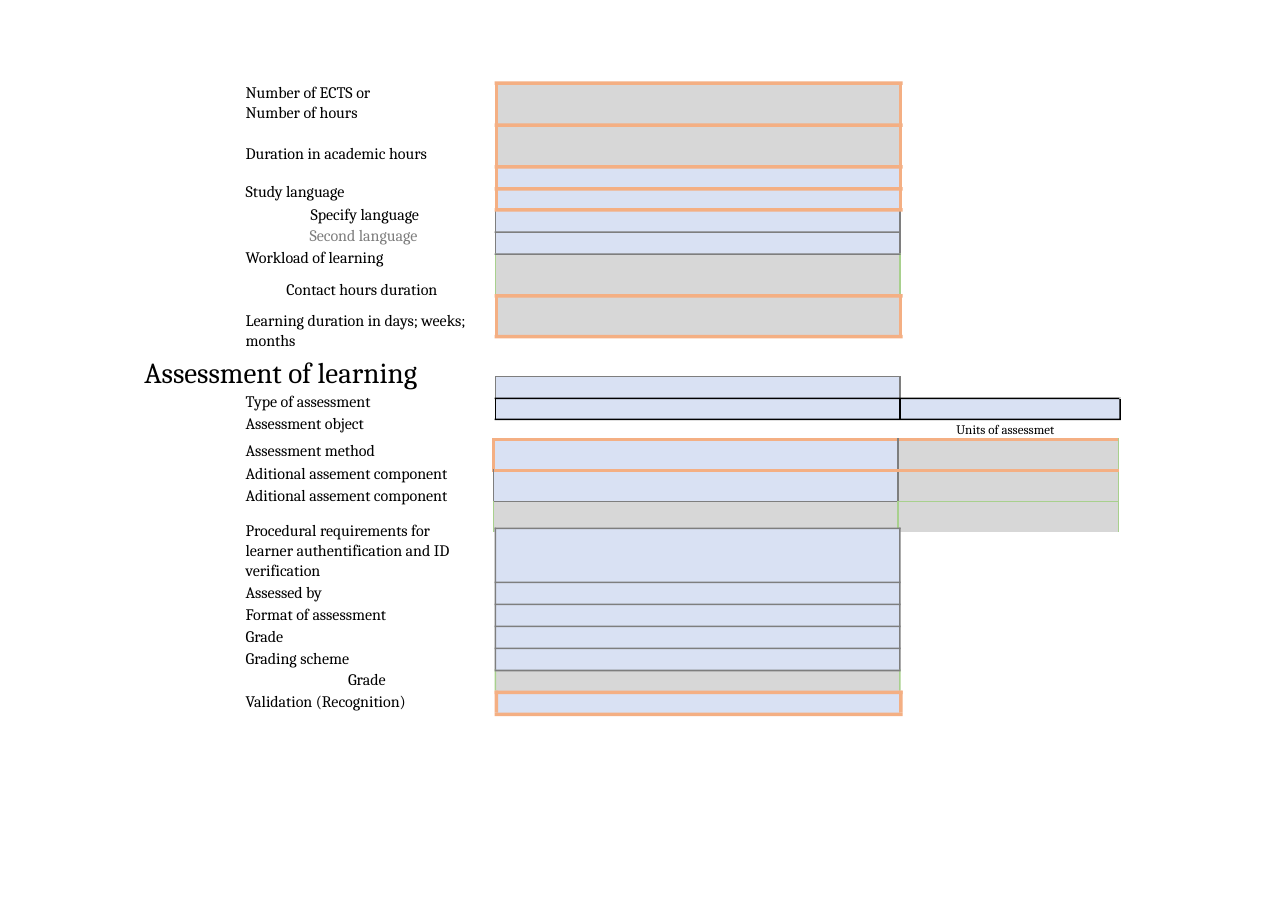
"""Build the slide with the workload and assessment form."""
from collections import namedtuple
from itertools import groupby

from lxml import etree
from pptx import Presentation
from pptx import util as u
from pptx.dml.color import RGBColor
from pptx.enum import text
from pptx.oxml.ns import qn

PX = 9144
FONT = "Cambria"
COLORS = {
    "blue": "D9E1F3", "silver": "D7D7D7", "orange": "F4AF83", "grey": "7E7E7E",
    "green": "A8D08D", "black": "000000",
}
EDGE_WEIGHTS = {"green": 1, "grey": 1, "black": 1, "orange": 2.25}
EDGE_ORDER = list(EDGE_WEIGHTS)

Label = namedtuple("Label", "lines indent first spacing before size tints",
                   defaults=(0, 1.0, 0, 10.5, {}))
Row = namedtuple("Row", "top bottom fill edge")

WORKLOAD_ROWS = [
    *[(38, "silver", "orange")] * 2,
    (20, "blue", "orange"),
    (19, "blue", "orange"),
    (21, "blue", "grey"),
    (20, "blue", "grey"),
    (37, "silver", "green"),
    (37, "silver", "orange"),
]
GRADING_ROWS = [
    (49, "blue", "grey"),
    *[(20, "blue", "grey")] * 4,
    (19, "silver", "green"),
    (20, "blue", "orange"),
]
METHOD_CELLS = [
    [("blue", ("orange", "grey", "orange", "orange")),
     ("silver", ("grey", "green", "orange", "orange"))],
    [("blue", ("grey", "grey", "orange", "grey")),
     ("silver", ("grey", "green", "orange", "green"))],
    [("silver", ("green", "green", "grey", None)),
     ("silver", ("green", "green", "green", None))],
]
WORKLOAD_LABELS = [
    Label(["Number of ECTS or", "Number of hours"], 93, spacing=1.02),
    Label(["Duration in academic hours", "Study language"], 93, spacing=1.98, before=1.9),
    Label(["Specify language"], 152, spacing=1.16),
    Label(["Second language", "Workload of learning"], 93, 58, 1.13, tints={0: "grey"}),
    Label(["Contact hours duration"], 93, 37, before=8.1),
    Label(["Learning duration in days; weeks;", "months"], 93, spacing=1.02, before=7.9),
    Label(["Assessment of learning"], 1, before=3.2, size=19),
    Label(["Type of assessment", "Assessment object"], 93, spacing=1.11, before=0.1),
]
UNITS_LABELS = [Label(["Units of assessmet"], 1, size=8.5)]
ASSESSMENT_LABELS = [
    Label(["Assessment method"], 1),
    Label(["Aditional assement component"] * 2, 1, spacing=1.13, before=0.9),
    Label(["Procedural requirements for", "learner authentification and ID", "verification"],
          1, spacing=1.02, before=10.4),
    Label(["Assessed by"], 1, before=2.2),
    Label(["Format of assessment", "Grade"], 1, spacing=1.13),
    Label(["Grading scheme"], 1, before=1.7),
    Label(["Grade", "Validation (Recognition)"], 1, 93, 1.13),
]


def px(length):
    """Turn px into EMU."""
    return u.Emu(length * PX)


def color(name):
    """Look up a colour by name."""
    return RGBColor.from_string(COLORS[name])


def rect(left, top, right, bottom):
    """List the corners of a rectangle."""
    return [(right, top), (left, top), (left, bottom), (right, bottom)]


def draw_area(page, contours, fill):
    """Draw one filled shape made of closed contours in EMU."""
    builder = page.shapes.build_freeform(*contours[0][0], scale=1.0)
    for index, points in enumerate(contours):
        if index:
            builder.move_to(*points[0])
        builder.add_line_segments(points[1:], close=True)
    area = builder.convert_to_shape()
    area.shadow.inherit = False
    area.fill.solid()
    area.fill.fore_color.rgb = color(fill)
    area.line.fill.background()


def side_bar(x, top, bottom, edge):
    """Outline an upright border bar."""
    return rect(px(x), px(top), px(x) + u.Pt(EDGE_WEIGHTS[edge]), px(bottom))


def rule_bar(left, right, y, edge):
    """Outline a level border bar."""
    weight = u.Pt(EDGE_WEIGHTS[edge])
    return rect(px(left), px(y), px(right) + weight, px(y) + weight)


def field_stack(page, left, top, width, sizes, paired):
    """Stack fields with bars between them; paired sides share a shape."""
    right, rows = left + width, []
    for height, fill, edge in sizes:
        rows.append(Row(top, top + height, fill, edge))
        top += height
    for fill, run in groupby(rows, key=lambda row: row.fill):
        band = list(run)
        corners = [px(v + 1) for v in (left, band[0].top, right, band[-1].bottom)]
        draw_area(page, [rect(*corners)], fill)
    for sides in [(left, right)] if paired else [(left,), (right,)]:
        for edge, run in groupby(rows, key=lambda row: row.edge):
            band = list(run)
            draw_area(page, [side_bar(x, band[0].top, band[-1].bottom, edge)
                             for x in sides], edge)
    edges = [row.edge for row in rows]
    strongest = [max(pair, key=EDGE_ORDER.index)
                 for pair in zip(edges[:1] + edges, edges + edges[-1:])]
    rules = zip(strongest, [row.top for row in rows] + [top])
    for edge, run in groupby(rules, key=lambda rule: rule[0]):
        draw_area(page, [rule_bar(left, right, y, edge) for _, y in run], edge)


def assessment_frame(page, left, top, width, units_width, step):
    """Draw the assessment fields, the lower one reaching over the units."""
    right, end = left + width, left + width + units_width
    middle, bottom = top + step, top + 2 * step - 1
    outline = [(end, middle), (right, middle), (right, top), (left, top),
               (left, bottom), (end, bottom)]
    draw_area(page, [[(px(x + 1), px(y + 1)) for x, y in outline]], "blue")
    for x in (left, right):
        draw_area(page, [side_bar(x, top, middle, "grey")], "grey")
        draw_area(page, [side_bar(x, middle, bottom + 1, "black")], "black")
    draw_area(page, [rule_bar(left, right, top, "grey")], "grey")
    draw_area(page, [rule_bar(left, end, middle, "black"),
                     rule_bar(left, end, bottom, "black"),
                     side_bar(end, middle, bottom, "black")], "black")


def style_cell(cell, fill, edges):
    """Give an empty table cell its borders and fill."""
    properties = cell._tc.get_or_add_tcPr()
    for side, edge in zip("LRTB", edges):
        line = etree.SubElement(properties, qn(f"a:ln{side}"))
        if edge is None:
            etree.SubElement(line, qn("a:noFill"))
            continue
        line.set("w", str(u.Pt(EDGE_WEIGHTS[edge])))
        paint = etree.SubElement(line, qn("a:solidFill"))
        etree.SubElement(paint, qn("a:srgbClr"), val=COLORS[edge])
    cell.fill.solid()
    cell.fill.fore_color.rgb = color(fill)
    cell.margin_left = cell.margin_right = cell.margin_top = cell.margin_bottom = 0
    etree.SubElement(cell.text_frame.paragraphs[0]._p, qn("a:endParaRPr"), sz="800")


def method_table(page, left, top, widths, row_height):
    """Place the table of assessment methods and units."""
    count = len(METHOD_CELLS)
    table = page.shapes.add_table(count, len(widths), px(left), px(top),
                                  px(sum(widths)), px(row_height * count)).table
    table.first_row = table.horz_banding = False
    for column, width in zip(table.columns, widths):
        column.width = px(width)
    for row, cells in zip(table.rows, METHOD_CELLS):
        row.height = px(row_height)
        for cell, (fill, edges) in zip(row.cells, cells):
            style_cell(cell, fill, edges)


def label_column(page, left, top, width, height, labels, inset=0):
    """Set a column of labels in one text box."""
    box = page.shapes.add_textbox(px(left), px(top), px(width), px(height))
    frame = box.text_frame
    frame.word_wrap = True
    frame.auto_size = text.MSO_AUTO_SIZE.NONE
    frame.margin_left = frame.margin_right = frame.margin_bottom = 0
    frame.margin_top = px(inset)
    for index, label in enumerate(labels):
        para = frame.add_paragraph() if index else frame.paragraphs[0]
        para.line_spacing = label.spacing
        para.space_before = u.Pt(label.before)
        para.font.name = FONT
        para.font.size = u.Pt(label.size)
        para.font.color.rgb = color("black")
        properties = para._p.get_or_add_pPr()
        properties.set("marL", str(px(label.indent)))
        properties.set("indent", str(px(label.first)))
        for number, line in enumerate(label.lines):
            if number:
                para.add_line_break()
            span = para.add_run()
            span.text = line
            if number in label.tints:
                span.font.color.rgb = color(label.tints[number])


def main():
    """Lay out the form and save the deck."""
    deck = Presentation()
    deck.slide_width, deck.slide_height = px(1169), px(827)
    page = deck.slides.add_slide(deck.slide_layouts[6])
    left, width, units_width = 449, 367, 200
    field_stack(page, left, 74, width, WORKLOAD_ROWS, paired=False)
    assessment_frame(page, left, 341, width, units_width, 20)
    method_table(page, left - 1, 399, [width, units_width], 28)
    field_stack(page, left, 479, width, GRADING_ROWS, paired=True)
    label_column(page, 130, 75, 311, 306, WORKLOAD_LABELS)
    label_column(page, 867, 382, 100, 17, UNITS_LABELS, inset=1)
    label_column(page, 222, 395, 202, 253, ASSESSMENT_LABELS, inset=5)
    deck.save("out.pptx")


if __name__ == "__main__":
    main()
